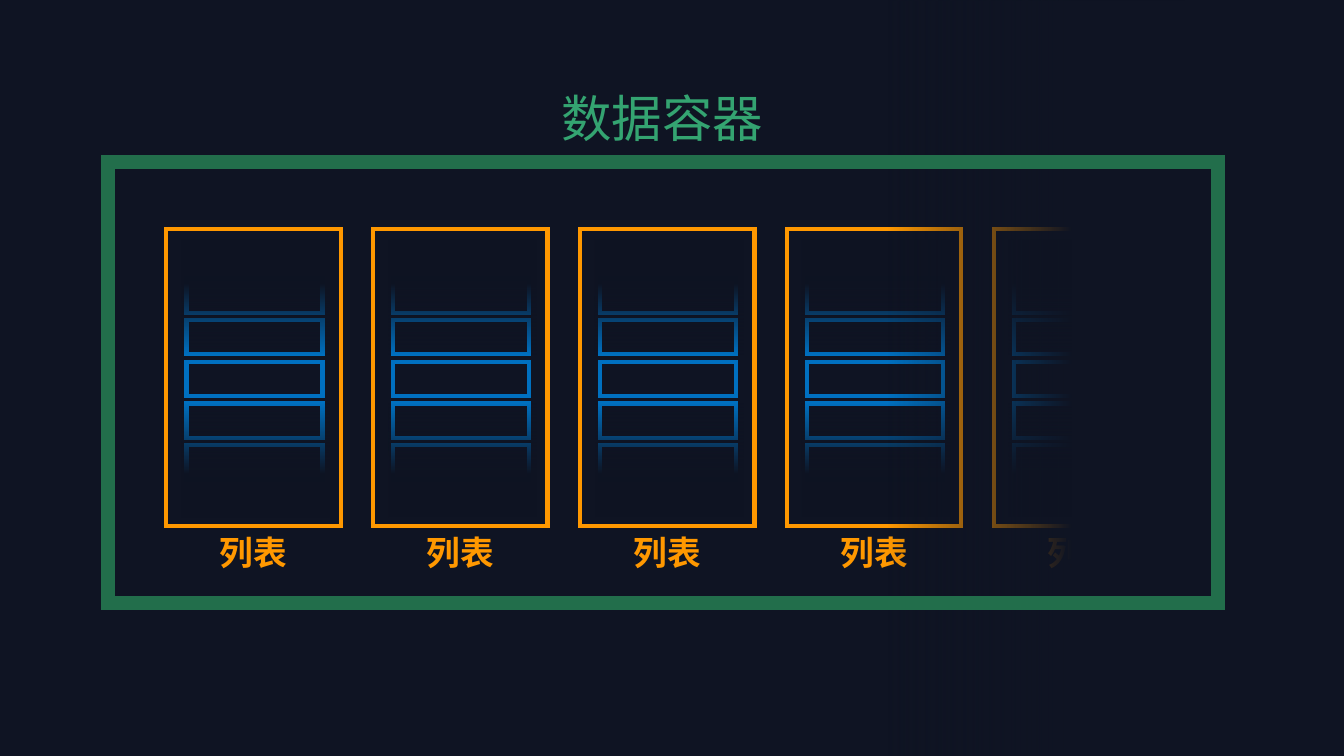
import pptx
import pptx.dml.color
import pptx.enum.shapes
import pptx.enum.text
import pptx.util
from lxml import etree

Pt = pptx.util.Pt

TITLE = "数据容器"
LIST_LABELS = ["列表"] * 5
SLOTS_PER_LIST = 5

FONT = "Noto Sans CJK SC"
BACKGROUND, BLUE, ORANGE = "0F1423", "0070C0", "FF9800"
FRAME_GREEN, TITLE_GREEN = "226E4B", "34A471"

SLIDE_WIDTH, SLIDE_HEIGHT = 960, 540
LIST_LEFT, LIST_TOP, LIST_PITCH = 118.8, 163.4, 147.75
LIST_WIDTH, LIST_HEIGHT = 124.6, 212.4
SLOT_TOP, SLOT_PITCH, SLOT_WIDTH, SLOT_HEIGHT = 198.9, 29.8, 97.2, 24.5
SLOT_INSET, FADE_INSET = 14.4, 10.8
FADE_WIDTH, FADE_HEIGHT = 105.8, 81.8
UPPER_FADE_TOP, LOWER_FADE_TOP = 171.4, 288
LABEL_TOP, LABEL_HEIGHT = 376.6, 36


def color(hex_value):
    return pptx.dml.color.RGBColor.from_string(hex_value)


def add_rectangle(shapes, left, top, width, height):
    shape = shapes.add_shape(
        pptx.enum.shapes.MSO_SHAPE.RECTANGLE, Pt(left), Pt(top), Pt(width), Pt(height)
    )
    shape.shadow.inherit = False
    return shape


def add_outline(shapes, left, top, width, height, line_color, line_width):
    shape = add_rectangle(shapes, left, top, width, height)
    shape.fill.background()
    shape.line.color.rgb = color(line_color)
    shape.line.width = Pt(line_width)
    miter = etree.SubElement(shape.line._get_or_add_ln(), pptx.oxml.ns.qn("a:miter"))
    miter.set("lim", "800000")


def add_fade(shapes, left, top, width, height, rotation=0):
    """Cover that is solid along its top edge and clear at its bottom edge."""
    shape = add_rectangle(shapes, left, top, width, height)
    shape.rotation = rotation
    shape.line.fill.background()
    shape.fill.gradient()
    shape.fill.gradient_angle = 270
    solid, clear = shape.fill.gradient_stops
    for stop, position in ((solid, 0.38), (clear, 1)):
        stop.position = position
        stop.color.rgb = color(BACKGROUND)
    clear_color = shape._element.spPr.findall(".//" + pptx.oxml.ns.qn("a:srgbClr"))[-1]
    etree.SubElement(clear_color, pptx.oxml.ns.qn("a:alpha")).set("val", "0")


def add_text(shapes, text, left, top, width, height, size, text_color, bold=False):
    text_box = shapes.add_textbox(Pt(left), Pt(top), Pt(width), Pt(height))
    text_frame = text_box.text_frame
    text_frame.text = text
    paragraph = text_frame.paragraphs[0]
    paragraph.alignment = pptx.enum.text.PP_ALIGN.CENTER
    run = paragraph.runs[0]
    run.font.name = FONT
    run.font.size = Pt(size)
    run.font.bold = bold
    run.font.color.rgb = color(text_color)
    properties = run._r.get_or_add_rPr()
    etree.SubElement(properties, pptx.oxml.ns.qn("a:ea")).set("typeface", FONT)
    return text_frame


def add_list(slide, label, left):
    shapes = slide.shapes.add_group_shape().shapes
    for slot in range(SLOTS_PER_LIST):
        add_outline(shapes, left + SLOT_INSET, SLOT_TOP + slot * SLOT_PITCH,
                    SLOT_WIDTH, SLOT_HEIGHT, BLUE, 3)
    add_outline(shapes, left, LIST_TOP, LIST_WIDTH, LIST_HEIGHT, ORANGE, 3)
    for top, rotation in ((LOWER_FADE_TOP, 180), (UPPER_FADE_TOP, 0)):
        add_fade(shapes, left + FADE_INSET, top, FADE_WIDTH, FADE_HEIGHT, rotation)
    text_frame = add_text(shapes, label, left, LABEL_TOP, LIST_WIDTH, LABEL_HEIGHT,
                          24, ORANGE, bold=True)
    text_frame.word_wrap = True


def main():
    presentation = pptx.Presentation()
    presentation.slide_width = Pt(SLIDE_WIDTH)
    presentation.slide_height = Pt(SLIDE_HEIGHT)
    slide = presentation.slides.add_slide(presentation.slide_layouts[6])
    slide.background.fill.solid()
    slide.background.fill.fore_color.rgb = color(BACKGROUND)

    for index, label in enumerate(LIST_LABELS):
        add_list(slide, label, LIST_LEFT + index * LIST_PITCH)
    add_fade(slide.shapes, 470.2, 164.2, SLIDE_HEIGHT, LIST_HEIGHT, rotation=90)
    add_outline(slide.shapes, 77, 115.9, 792.7, 314.6, FRAME_GREEN, 10)
    title_frame = add_text(slide.shapes, TITLE, 393.8, 59, 158.4, 51, 36, TITLE_GREEN)
    title_frame.word_wrap = False

    presentation.save("out.pptx")


if __name__ == "__main__":
    main()
